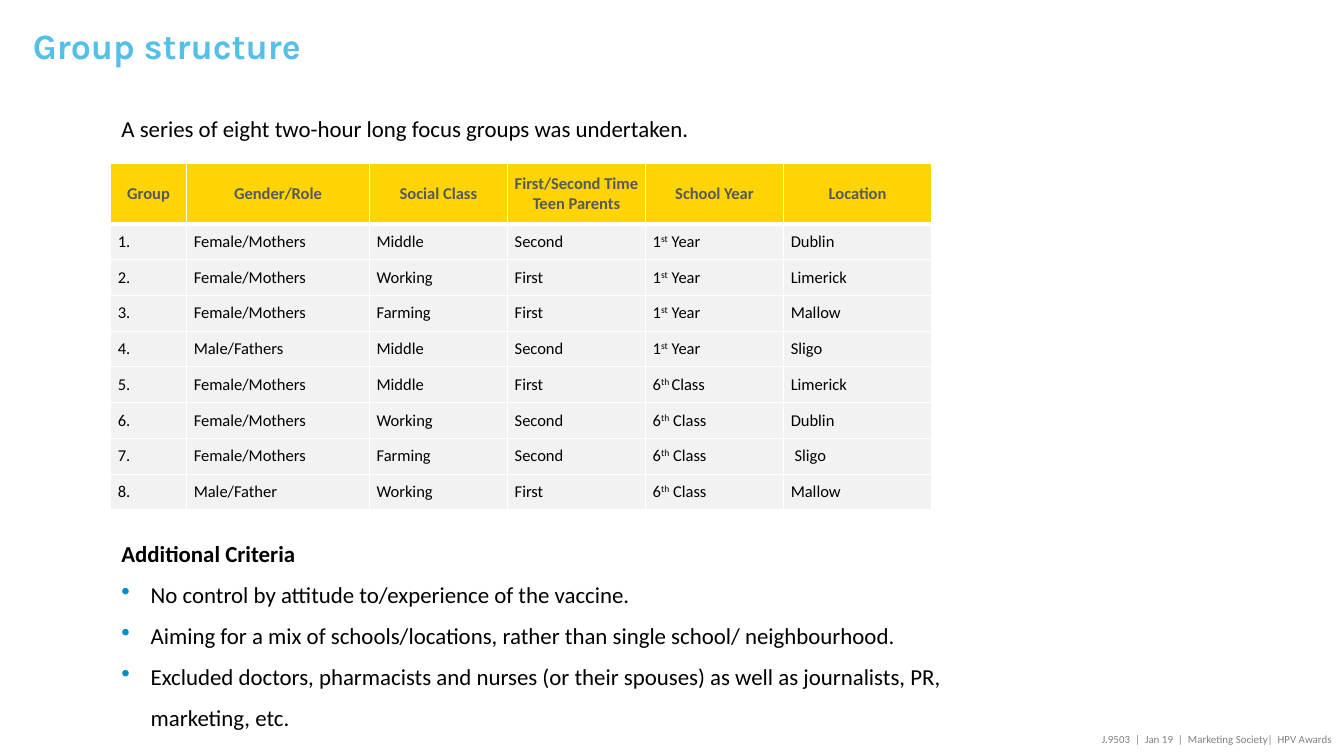
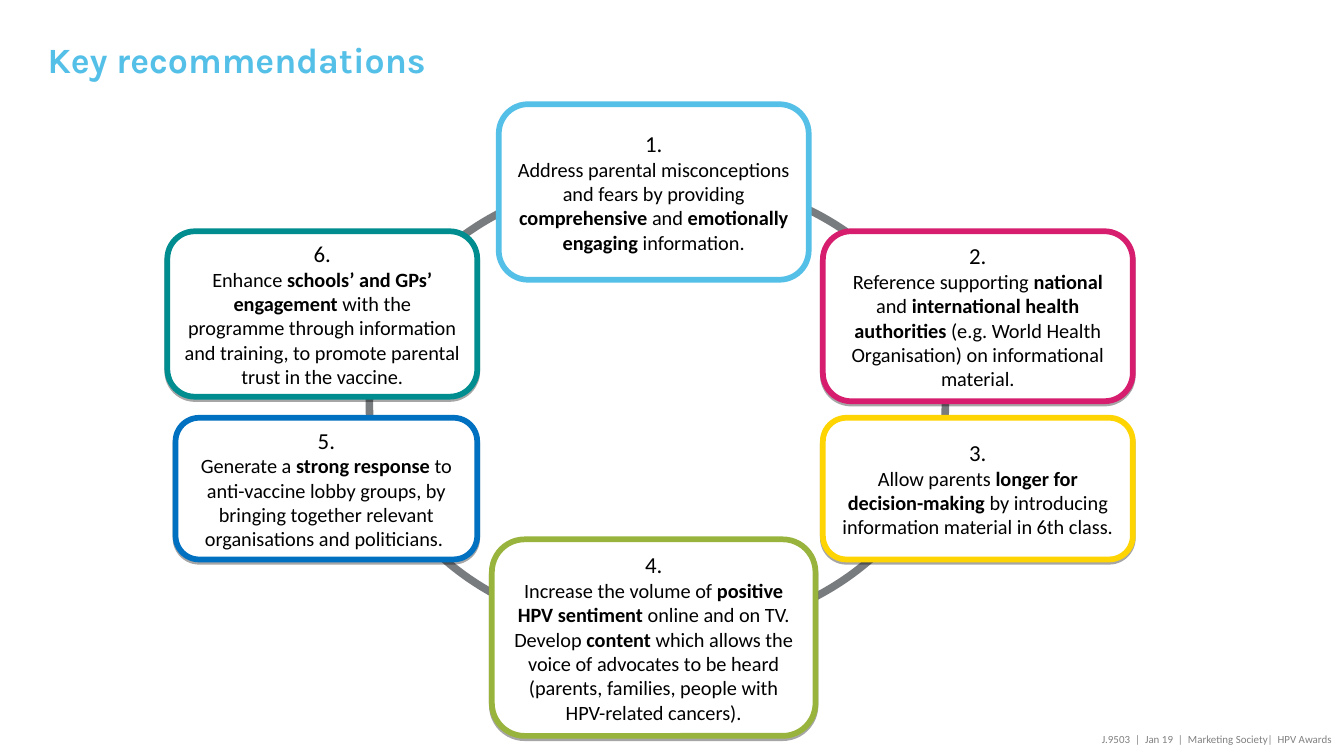
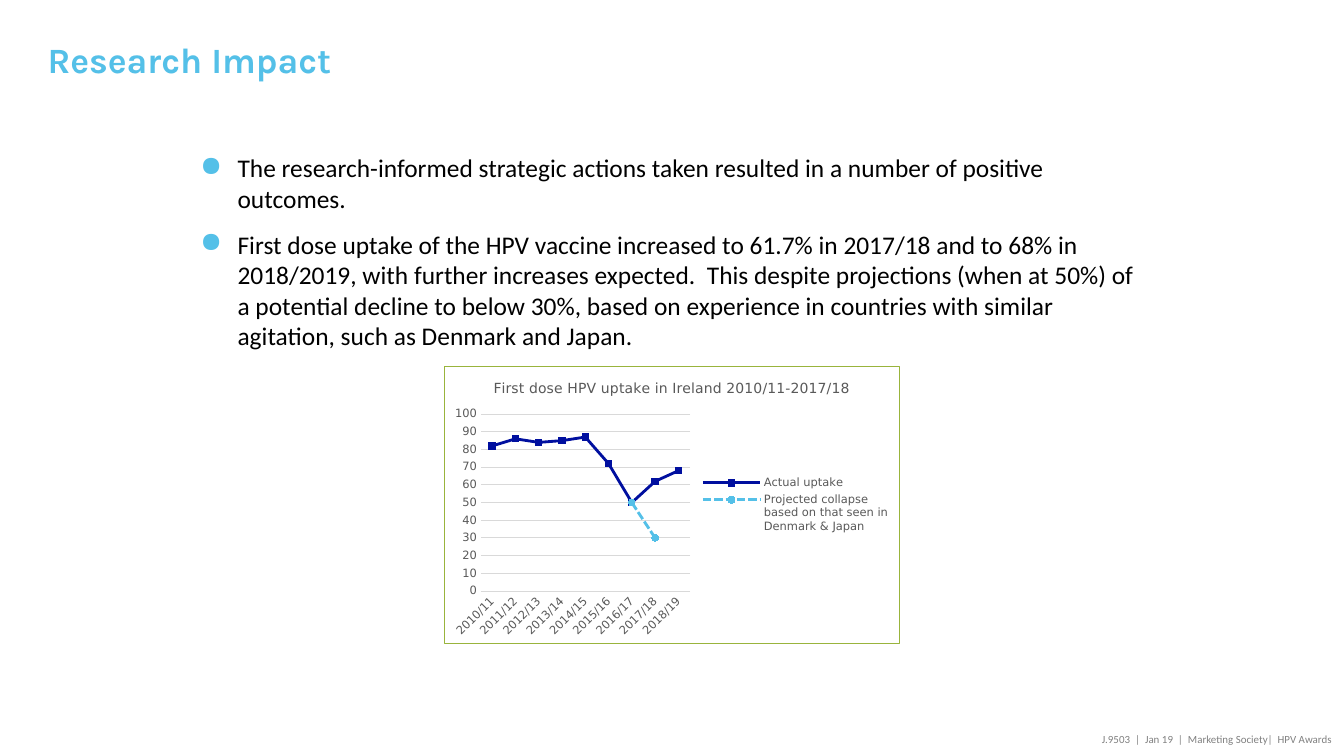
from collections import namedtuple
from dataclasses import dataclass
from itertools import cycle

from lxml.etree import SubElement as Sub
from pptx import Presentation
from pptx.chart.data import CategoryChartData as Data
from pptx.dml.color import RGBColor as Rgb
from pptx.enum.chart import XL_CHART_TYPE as Kind, XL_LEGEND_POSITION as Side
from pptx.enum.chart import XL_MARKER_STYLE as Mark, XL_TICK_MARK as Tick
from pptx.enum.dml import MSO_LINE as Dash
from pptx.enum.shapes import MSO_SHAPE as Form
from pptx.enum.text import MSO_ANCHOR as Anchor, PP_ALIGN as Align
from pptx.oxml import parse_xml
from pptx.oxml.ns import nsdecls, qn
from pptx.util import Inches, Pt

Box = namedtuple("Box", "x y w h")


@dataclass(frozen=True)
class Theme:
    head: str = "Karla"
    body: str = "Calibri"
    plot: str = "DejaVu Sans"
    ink: str = "000000"
    paper: str = "FFFFFF"
    sky: str = "54C0E8"
    blue: str = "008FC5"
    azure: str = "0070C0"
    navy: str = "000F9F"
    pink: str = "D61D6E"
    gold: str = "FED402"
    teal: str = "008D8F"
    green: str = "99B43C"
    ring: str = "797C7F"
    dark: str = "595959"
    mid: str = "808080"
    rule: str = "D9D9D9"
    pale: str = "F2F2F2"
    title: float = 28
    lead: float = 20
    text: float = 18
    card: float = 16
    cell: float = 13
    foot: float = 8.6
    label: float = 9
    chart: float = 11


T = Theme()


def place(box):
    return [Inches(v) for v in box]


def style(font, size, color=T.ink, face=T.body, bold=False):
    font.size, font.name, font.bold = Pt(size), face, bold
    font.color.rgb = Rgb.from_string(color)


def write(par, text, size, color=T.ink, face=T.body, bold=False):
    for part, strong in zip(text.split("*"), cycle((bold, not bold))):
        for bit, high in zip(part.split("^"), cycle((False, True))):
            if bit:
                run = par.add_run()
                run.text = bit
                style(run.font, size, color, face, strong)
                if high:
                    run._r.get_or_add_rPr().set("baseline", "30000")


def bullet(par, char, color, indent):
    props = par._p.get_or_add_pPr()
    props.set("marL", str(Inches(indent)))
    props.set("indent", str(-Inches(indent)))
    tint = Sub(props, qn("a:buClr"))
    Sub(tint, qn("a:srgbClr"), val=color)
    Sub(props, qn("a:buSzPct"), val="110000")
    Sub(props, qn("a:buChar"), char=char)


def frame(slide, box):
    shape = slide.shapes.add_textbox(*place(box))
    shape.text_frame.word_wrap = True
    return shape


def pars(area, count):
    return [area.paragraphs[0]] + [area.add_paragraph() for _ in range(count - 1)]


def page(deck, text, box, anchor=Anchor.MIDDLE):
    slide = deck.slides.add_slide(deck.slide_layouts[5])
    title = slide.shapes.title
    title.left, title.top, title.width, title.height = place(box)
    area = title.text_frame
    area.vertical_anchor = anchor
    area.paragraphs[0].alignment = Align.LEFT
    write(area.paragraphs[0], text, T.title, T.sky, T.head, True)
    return slide


def footer(slide, box):
    shape = frame(slide, box)
    par = shape.text_frame.paragraphs[0]
    par.alignment = Align.RIGHT
    write(par, "J.9503  |  Jan 19  |  Marketing Society|  HPV Awards ", T.foot, T.mid)
    slide.slide_layout.shapes.element.append(shape.element)


def edges(cell, top, bottom):
    props = cell._tc.get_or_add_tcPr()
    sides = (("L", 1), ("R", 1), ("T", top), ("B", bottom))
    for spot, (side, width) in enumerate(sides):
        props.insert(spot, parse_xml(
            f'<a:ln{side} {nsdecls("a")} w="{Pt(width)}"><a:solidFill>'
            f'<a:srgbClr val="{T.paper}"/></a:solidFill></a:ln{side}>'))


HEADS = ["Group", "Gender/Role", "Social Class", "First/Second Time Teen Parents",
         "School Year", "Location"]
GROUPS = [
    ["Female/Mothers", "Middle", "Second", "1^st^ Year", "Dublin"],
    ["Female/Mothers", "Working", "First", "1^st^ Year", "Limerick"],
    ["Female/Mothers", "Farming", "First", "1^st^ Year", "Mallow"],
    ["Male/Fathers", "Middle", "Second", "1^st^ Year", "Sligo"],
    ["Female/Mothers", "Middle", "First", "6^th ^Class", "Limerick"],
    ["Female/Mothers", "Working", "Second", "6^th^ Class", "Dublin"],
    ["Female/Mothers", "Farming", "Second", "6^th^ Class", "\u00a0Sligo".replace("\u00a0", " ")],
    ["Male/Father", "Working", "First", "6^th^ Class", "Mallow"],
]


def grid(slide, box):
    rows = [HEADS] + [[f"{n}."] + row for n, row in enumerate(GROUPS, 1)]
    table = slide.shapes.add_table(len(rows), len(HEADS), *place(box)).table
    for col, width in zip(table.columns, (0.83, 2, 1.51, 1.51, 1.51, 1.62)):
        col.width = Inches(width)
    top = 0.66
    for r, row in enumerate(rows):
        first = r == 0
        table.rows[r].height = Inches(top if first else (box.h - top) / len(GROUPS))
        for c, text in enumerate(row):
            cell = table.cell(r, c)
            cell.margin_left = cell.margin_right = Inches(0.08)
            cell.margin_top = cell.margin_bottom = 0
            cell.vertical_anchor = Anchor.MIDDLE
            cell.fill.solid()
            cell.fill.fore_color.rgb = Rgb.from_string(T.gold if first else T.pale)
            edges(cell, 3 if r == 1 else 1, 3 if first else 1)
            par = cell.text_frame.paragraphs[0]
            par.alignment = Align.CENTER if first else Align.LEFT
            write(par, text, T.cell, T.dark if first else T.ink, bold=first)


def notes(slide, box, lines):
    area = frame(slide, box).text_frame
    for n, (par, line) in enumerate(zip(pars(area, len(lines)), lines)):
        par.line_spacing = 1.5
        if n:
            bullet(par, "•", T.blue, 0.32)
        write(par, line, T.text)


def groups(deck):
    slide = page(deck, "Group structure", Box(0.26, 0.21, 10.48, 0.75), Anchor.TOP)
    footer(slide, Box(10.42, 7.96, 4.28, 0.25))
    grid(slide, Box(1.21, 1.79, 8.98, 3.79))
    notes(slide, Box(1.23, 5.7, 9.73, 2.33), [
        "*Additional Criteria*",
        "No control by attitude to/experience of the vaccine.",
        "Aiming for a mix of schools/locations, rather than single school/ neighbourhood.",
        "Excluded doctors, pharmacists and nurses (or their spouses) as well as "
        "journalists, PR, marketing, etc."])
    notes(slide, Box(1.23, 1.06, 8.94, 0.51),
          ["A series of eight two-hour long focus groups was undertaken."])


def shade(shape):
    shape._element.spPr.append(parse_xml(
        f'<a:effectLst {nsdecls("a")}><a:outerShdw blurRad="0" dist="{Pt(1.8)}" '
        f'dir="5400000" rotWithShape="0"><a:srgbClr val="{T.ink}">'
        '<a:alpha val="35000"/></a:srgbClr></a:outerShdw></a:effectLst>'))


def outline(slide, form, box, color, width):
    shape = slide.shapes.add_shape(form, *place(box))
    shape.fill.background()
    shape.line.color.rgb = Rgb.from_string(color)
    shape.line.width = Pt(width)
    return shape


def card(slide, box, color, number, text, raised):
    shape = outline(slide, Form.ROUNDED_RECTANGLE, box, color, 4.5)
    shape.fill.solid()
    shape.fill.fore_color.rgb = Rgb.from_string(T.paper)
    if raised:
        shade(shape)
    else:
        shape.shadow.inherit = False
    area = shape.text_frame
    area.word_wrap = True
    area.vertical_anchor = Anchor.MIDDLE
    lines = ((f"{number}.", T.text), (text, T.card))
    for par, (line, size) in zip(pars(area, 2), lines):
        par.alignment = Align.CENTER
        write(par, line, size)


LEFT, MID, RIGHT = (3.39, 1), (5.32, 0.5), (7.17, 0)
CARDS = [
    (MID, 0, 3.39, 1.92, T.sky,
     "Address parental misconceptions and fears by providing *comprehensive* and "
     "*emotionally engaging *information."),
    (RIGHT, 1.39, 3.39, 1.86, T.pink,
     "Reference supporting *national* and *international health authorities *"
     "(e.g. World Health Organisation) on informational material."),
    (RIGHT, 3.43, 3.39, 1.55, T.gold,
     "Allow parents *longer for decision-making *by introducing information "
     "material in 6th class."),
    (MID, 4.76, 3.54, 2.15, T.green,
     "Increase the volume of *positive HPV sentiment *online and on TV. Develop "
     "*content* which allows the voice of advocates to be heard (parents, families, "
     "people with HPV-related cancers)."),
    (LEFT, 3.43, 3.3, 1.55, T.azure,
     "Generate a *strong response *to anti-vaccine lobby groups, by bringing "
     "together relevant organisations and politicians. "),
    (LEFT, 1.39, 3.39, 1.81, T.teal,
     "Enhance *schools’ and GPs’ engagement *with the programme through information "
     "and training, to promote parental trust in the vaccine."),
]


def wheel(slide, box):
    ring = Box(box.x + 2.21, box.y + 0.78, 6.3, 5.02)
    outline(slide, Form.OVAL, ring, T.ring, 6).shadow.inherit = False
    for n, ((edge, share), top, w, h, color, text) in enumerate(CARDS, 1):
        spot = Box(box.x + edge - share * w, box.y + top, w, h)
        card(slide, spot, color, n, text, n > 1)


def advice(deck):
    slide = page(deck, "Key recommendations", Box(0.42, -0.04, 8.82, 1.38))
    wheel(slide, Box(1.83, 1.14, 10.56, 6.91))


def points(slide, box, lines):
    area = frame(slide, box).text_frame
    for n, (par, line) in enumerate(zip(pars(area, len(lines)), lines)):
        bullet(par, "●", T.sky, 0.41)
        par.space_before = Pt(6 if n else 0)
        par.space_after = Pt(6)
        write(par, line, T.lead)


def thin(line, color):
    line.color.rgb = Rgb.from_string(color)
    line.width = Pt(0.75)


def border(chart):
    chart.element.find(qn("c:chart")).addnext(parse_xml(
        f'<c:spPr {nsdecls("c", "a")}><a:solidFill><a:srgbClr val="{T.paper}"/>'
        f'</a:solidFill><a:ln w="{Pt(0.75)}"><a:solidFill>'
        f'<a:srgbClr val="{T.green}"/></a:solidFill></a:ln></c:spPr>'))


def trend(slide, box):
    data = Data()
    data.categories = [f"20{y}/{y + 1}" for y in range(10, 19)]
    data.add_series("Actual uptake", (82, 86, 84, 85, 87, 72, 50, 62, 68))
    data.add_series("Projected collapse based on that seen in Denmark & Japan",
                    [None] * 6 + [50, 30, None])
    chart = slide.shapes.add_chart(Kind.LINE_MARKERS, *place(box), data).chart
    style(chart.font, 10, T.ink, T.plot)
    border(chart)
    chart.has_title = True
    write(chart.chart_title.text_frame.paragraphs[0],
          "First dose HPV uptake in Ireland 2010/11-2017/18", T.chart, T.dark, T.plot)
    chart.has_legend = True
    chart.legend.position = Side.RIGHT
    chart.legend.include_in_layout = False
    cats, vals = chart.category_axis, chart.value_axis
    for part in (chart.legend, cats.tick_labels, vals.tick_labels):
        style(part.font, T.label, T.dark, T.plot)
    for axis in (cats, vals):
        axis.major_tick_mark = axis.minor_tick_mark = Tick.NONE
    thin(cats.format.line, T.rule)
    vals.format.line.fill.background()
    thin(vals.major_gridlines.format.line, T.rule)
    vals.minimum_scale, vals.maximum_scale, vals.major_unit = 0, 100, 10
    chart.plots[0].vary_by_categories = False
    looks = ((T.navy, Mark.SQUARE, Dash.SOLID), (T.sky, Mark.CIRCLE, Dash.SQUARE_DOT))
    for line, (color, mark, dash) in zip(chart.plots[0].series, looks):
        line.smooth = False
        line.format.line.color.rgb = Rgb.from_string(color)
        line.format.line.width = Pt(2.25)
        line.format.line.dash_style = dash
        line.marker.style, line.marker.size = mark, 5
        line.marker.format.fill.solid()
        line.marker.format.fill.fore_color.rgb = Rgb.from_string(color)
        line.marker.format.line.color.rgb = Rgb.from_string(color)


def impact(deck):
    slide = page(deck, "Research Impact", Box(0.42, -0.04, 14.28, 1.38))
    points(slide, Box(2.09, 1.62, 10.52, 5.46), [
        "The research-informed strategic actions taken resulted in a number of "
        "positive outcomes.",
        "First dose uptake of the HPV vaccine increased to 61.7% in 2017/18 and to "
        "68% in 2018/2019, with further increases expected.  This despite projections "
        "(when at 50%) of a potential decline to below 30%, based on experience in "
        "countries with similar agitation, such as Denmark and Japan."])
    trend(slide, Box(4.86, 4, 4.98, 3.04))


def main():
    deck = Presentation()
    deck.slide_width, deck.slide_height = Inches(14.7), Inches(8.27)
    for build in (groups, advice, impact):
        build(deck)
    deck.save("out.pptx")


if __name__ == "__main__":
    main()
